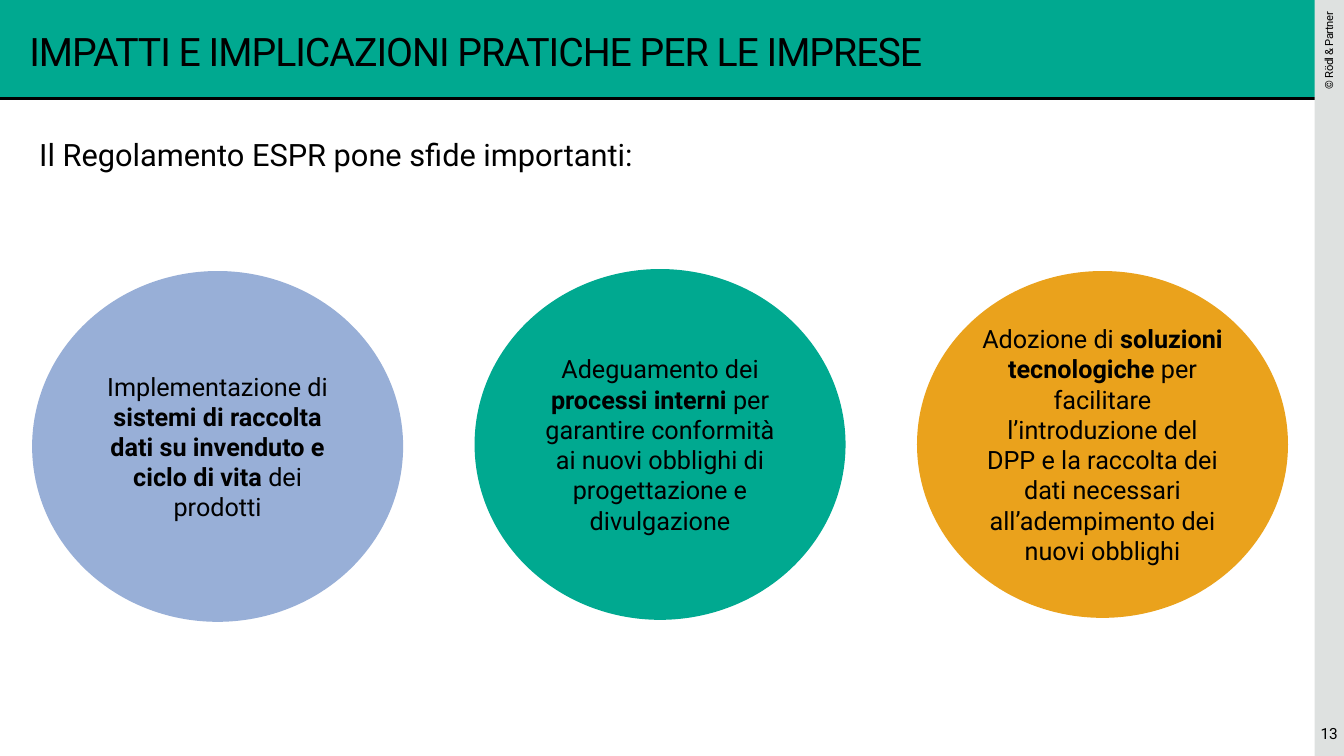
from dataclasses import dataclass

from pptx import Presentation
from pptx.dml.color import RGBColor
from pptx.enum.shapes import MSO_CONNECTOR, MSO_SHAPE
from pptx.enum.text import MSO_ANCHOR, PP_ALIGN
from pptx.oxml.ns import qn
from pptx.util import Cm, Pt
from lxml import etree

RECTANGLE, ELLIPSE = MSO_SHAPE.RECTANGLE, MSO_SHAPE.OVAL
STRAIGHT = MSO_CONNECTOR.STRAIGHT
TOP, MIDDLE = MSO_ANCHOR.TOP, MSO_ANCHOR.MIDDLE
LEFT, CENTER, RIGHT = PP_ALIGN.LEFT, PP_ALIGN.CENTER, PP_ALIGN.RIGHT
JUSTIFY = PP_ALIGN.JUSTIFY


@dataclass(frozen=True)
class Theme:
    font: str = "Roboto"
    black: RGBColor = RGBColor(0x00, 0x00, 0x00)
    green: RGBColor = RGBColor(0x00, 0xA9, 0x90)
    grey: RGBColor = RGBColor(0xDE, 0xE1, 0xE0)
    blue: RGBColor = RGBColor(0x98, 0xAF, 0xD7)
    orange: RGBColor = RGBColor(0xEA, 0xA2, 0x1C)
    title_size: float = 28
    intro_size: float = 22
    body_size: float = 18
    number_size: float = 11
    copyright_size: float = 8


THEME = Theme()

# Lengths in centimetres
SLIDE_WIDTH, SLIDE_HEIGHT = 33.87, 19.05
BANNER_HEIGHT = 2.49
STRIP_WIDTH = 0.74
STRIP_LEFT = SLIDE_WIDTH - STRIP_WIDTH
CIRCLE_LEFT, CIRCLE_STEP, CIRCLE_WIDTH = 0.81, 11.15, 9.35

# Each challenge: colour, top, height, text before, bold text, text after
CHALLENGES = [
    (THEME.blue, 6.83, 8.84, "Implementazione di ",
     "sistemi di raccolta dati su invenduto e ciclo di vita ", "dei prodotti"),
    (THEME.green, 6.78, 8.84, "Adeguamento dei ", "processi interni ",
     "per garantire conformità ai nuovi obblighi di progettazione e divulgazione"),
    (THEME.orange, 6.83, 8.74, "Adozione di ", "soluzioni tecnologiche ",
     "per facilitare l’introduzione del DPP e la raccolta dei dati necessari "
     "all’adempimento dei nuovi obblighi"),
]


def format_run(run, size, bold=False, spacing=0):
    run.font.name = THEME.font
    run.font.size = Pt(size)
    run.font.bold = bold
    run.font.color.rgb = THEME.black
    if spacing:
        run.font._element.set("spc", str(round(spacing * 100)))


def add_filled_shape(slide, kind, box, color):
    shape = slide.shapes.add_shape(kind, *map(Cm, box))
    shape.shadow.inherit = False
    shape.fill.solid()
    shape.fill.fore_color.rgb = color
    shape.line.fill.background()
    return shape


def add_rule(slide, top, width):
    rule = slide.shapes.add_connector(STRAIGHT, 0, Cm(top), Cm(width), Cm(top))
    rule.line.color.rgb = THEME.black
    rule.line.width = Pt(2.25)
    etree.SubElement(rule._element.spPr, qn("a:effectLst"))


def add_label(slide, box, text, size, align=LEFT, anchor=MIDDLE,
              margins=(0, 0, 0, 0), spacing=0, wrap=True):
    label = slide.shapes.add_textbox(*map(Cm, box))
    frame = label.text_frame
    frame.word_wrap = wrap
    frame.vertical_anchor = anchor
    (frame.margin_left, frame.margin_top,
     frame.margin_right, frame.margin_bottom) = map(Cm, margins)
    frame.text = text
    paragraph = frame.paragraphs[0]
    paragraph.alignment = align
    format_run(paragraph.runs[0], size, spacing=spacing)
    return label


def add_challenge(slide, index, color, top, height, *texts):
    left = CIRCLE_LEFT + index * CIRCLE_STEP
    circle = add_filled_shape(slide, ELLIPSE, (left, top, CIRCLE_WIDTH, height), color)
    frame = circle.text_frame
    frame.word_wrap = True
    frame.vertical_anchor = MIDDLE
    paragraph = frame.paragraphs[0]
    paragraph.alignment = CENTER
    for position, text in enumerate(texts):
        run = paragraph.add_run()
        run.text = text
        format_run(run, THEME.body_size, bold=position == 1)


def main():
    presentation = Presentation()
    presentation.slide_width = Cm(SLIDE_WIDTH)
    presentation.slide_height = Cm(SLIDE_HEIGHT)
    slide = presentation.slides.add_slide(presentation.slide_layouts[6])

    # Banner and side strip
    add_filled_shape(slide, RECTANGLE, (0, 0, SLIDE_WIDTH, BANNER_HEIGHT), THEME.green)
    add_rule(slide, BANNER_HEIGHT, SLIDE_WIDTH)
    add_filled_shape(slide, RECTANGLE, (STRIP_LEFT, 0, STRIP_WIDTH, SLIDE_HEIGHT),
                     THEME.grey)
    copyright_line = add_label(
        slide, (32.23, 0.89, 2.51, STRIP_WIDTH), "© Rödl & Partner",
        THEME.copyright_size, RIGHT, margins=(0, 0, 0.3, 0), spacing=-0.3, wrap=False)
    copyright_line.rotation = 270

    # Title and page number
    add_label(slide, (0.74, 0.74, 31.8, 1.09),
              "IMPATTI E IMPLICAZIONI PRATICHE PER LE IMPRESE",
              THEME.title_size, spacing=-0.7)
    add_label(slide, (STRIP_LEFT, 17.93, STRIP_WIDTH, 1.12), "13",
              THEME.number_size, CENTER)

    # Challenges and their introduction
    for index, challenge in enumerate(CHALLENGES):
        add_challenge(slide, index, *challenge)
    add_label(slide, (0.74, 3.3, 31.27, 1.19),
              "Il Regolamento ESPR pone sfide importanti:", THEME.intro_size,
              JUSTIFY, TOP, margins=(0.25, 0.13, 0.25, 0.13))

    presentation.save("out.pptx")


if __name__ == "__main__":
    main()
